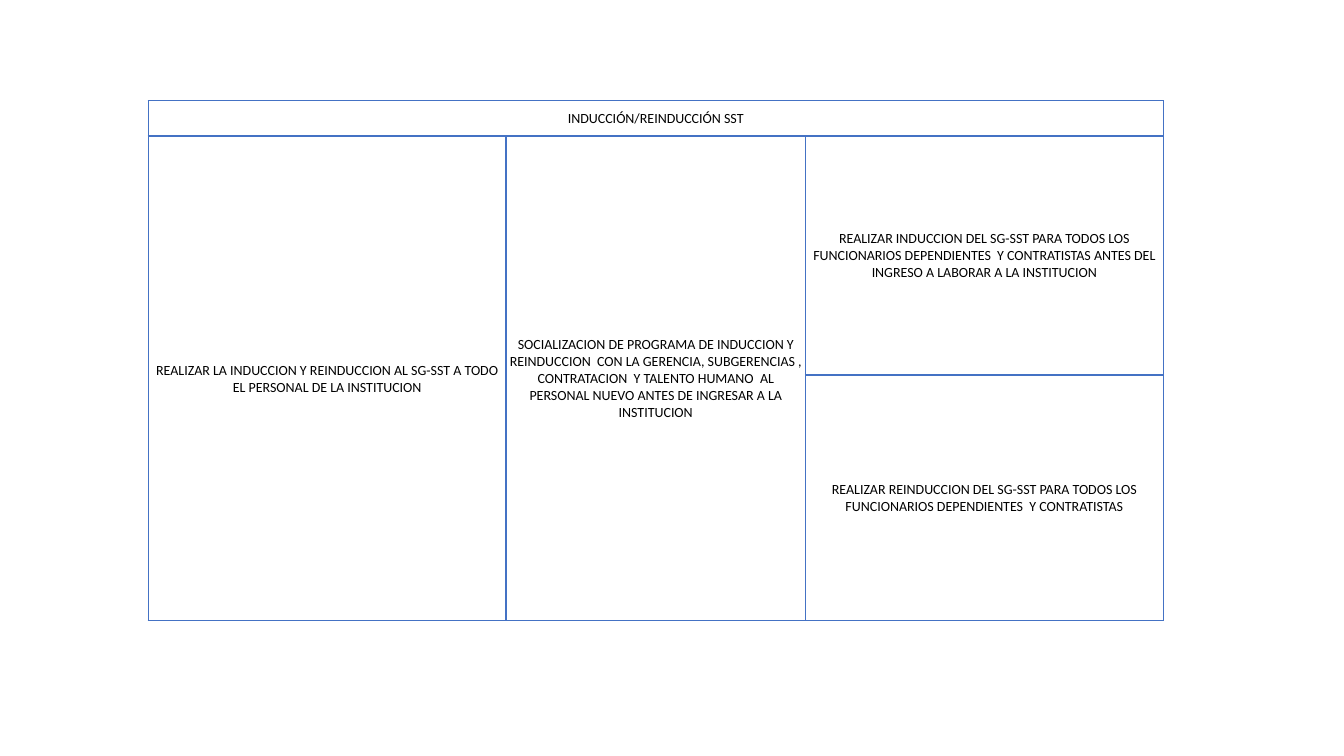
from pptx import Presentation
from pptx.dml.color import RGBColor
from pptx.enum.text import MSO_ANCHOR, PP_ALIGN
from pptx.oxml.ns import qn
from pptx.util import Pt
from lxml.etree import SubElement

COLORS = {"text": "000000", "border": "4472C4"}
COL_WIDTHS = [255.6, 213.84, 255.6]
ROW_HEIGHTS = [25.2, 170.64, 175.68]

# Cell texts: row, column, last merged row, last merged column, text
CELLS = [
    (0, 0, 0, 2, "INDUCCIÓN/REINDUCCIÓN SST"),
    (1, 0, 2, 0, "REALIZAR LA INDUCCION Y REINDUCCION AL SG-SST A TODO "
                 "EL PERSONAL DE LA INSTITUCION"),
    (1, 1, 2, 1, "SOCIALIZACION DE PROGRAMA DE INDUCCION Y REINDUCCION  CON LA "
                 "GERENCIA, SUBGERENCIAS , CONTRATACION  Y TALENTO HUMANO  AL "
                 "PERSONAL NUEVO ANTES DE INGRESAR A LA INSTITUCION"),
    (1, 2, 1, 2, "REALIZAR INDUCCION DEL SG-SST PARA TODOS LOS FUNCIONARIOS "
                 "DEPENDIENTES  Y CONTRATISTAS ANTES DEL INGRESO A LABORAR "
                 "A LA INSTITUCION"),
    (2, 2, 2, 2, "REALIZAR REINDUCCION DEL SG-SST PARA TODOS LOS FUNCIONARIOS "
                 "DEPENDIENTES  Y CONTRATISTAS"),
]


def write_text(cell, text, size=10, font="Calibri", color="text"):
    p = cell.text_frame.paragraphs[0]
    p.alignment = PP_ALIGN.CENTER
    r = p.add_run()
    r.text = text
    r.font.size = Pt(size)
    r.font.name = font
    r.font.color.rgb = RGBColor.from_string(COLORS[color])


prs = Presentation()
prs.slide_width, prs.slide_height = Pt(960), Pt(540)
s = prs.slides.add_slide(prs.slide_layouts[6])

# Table grid
table = s.shapes.add_table(
    len(ROW_HEIGHTS), len(COL_WIDTHS), Pt(105.84), Pt(72),
    Pt(sum(COL_WIDTHS)), Pt(sum(ROW_HEIGHTS))).table
table.first_row = table.horz_banding = False
for column, width in zip(table.columns, COL_WIDTHS):
    column.width = Pt(width)
for row, height in zip(table.rows, ROW_HEIGHTS):
    row.height = Pt(height)

# Borders, margins and fill of every cell
for cell in table.iter_cells():
    cell.margin_left = cell.margin_right = cell.margin_top = Pt(0.72)
    cell.margin_bottom = Pt(0)
    cell.vertical_anchor = MSO_ANCHOR.MIDDLE
    for side in ("L", "R", "T", "B"):
        ln = SubElement(cell._tc.get_or_add_tcPr(), qn(f"a:ln{side}"), w=str(Pt(1)))
        fill = SubElement(ln, qn("a:solidFill"))
        SubElement(fill, qn("a:srgbClr"), val=COLORS["border"])
    cell.fill.background()

# Merged areas and wording
for row, col, last_row, last_col, text in CELLS:
    cell = table.cell(row, col)
    if (row, col) != (last_row, last_col):
        cell.merge(table.cell(last_row, last_col))
    write_text(cell, text)

prs.save("out.pptx")
